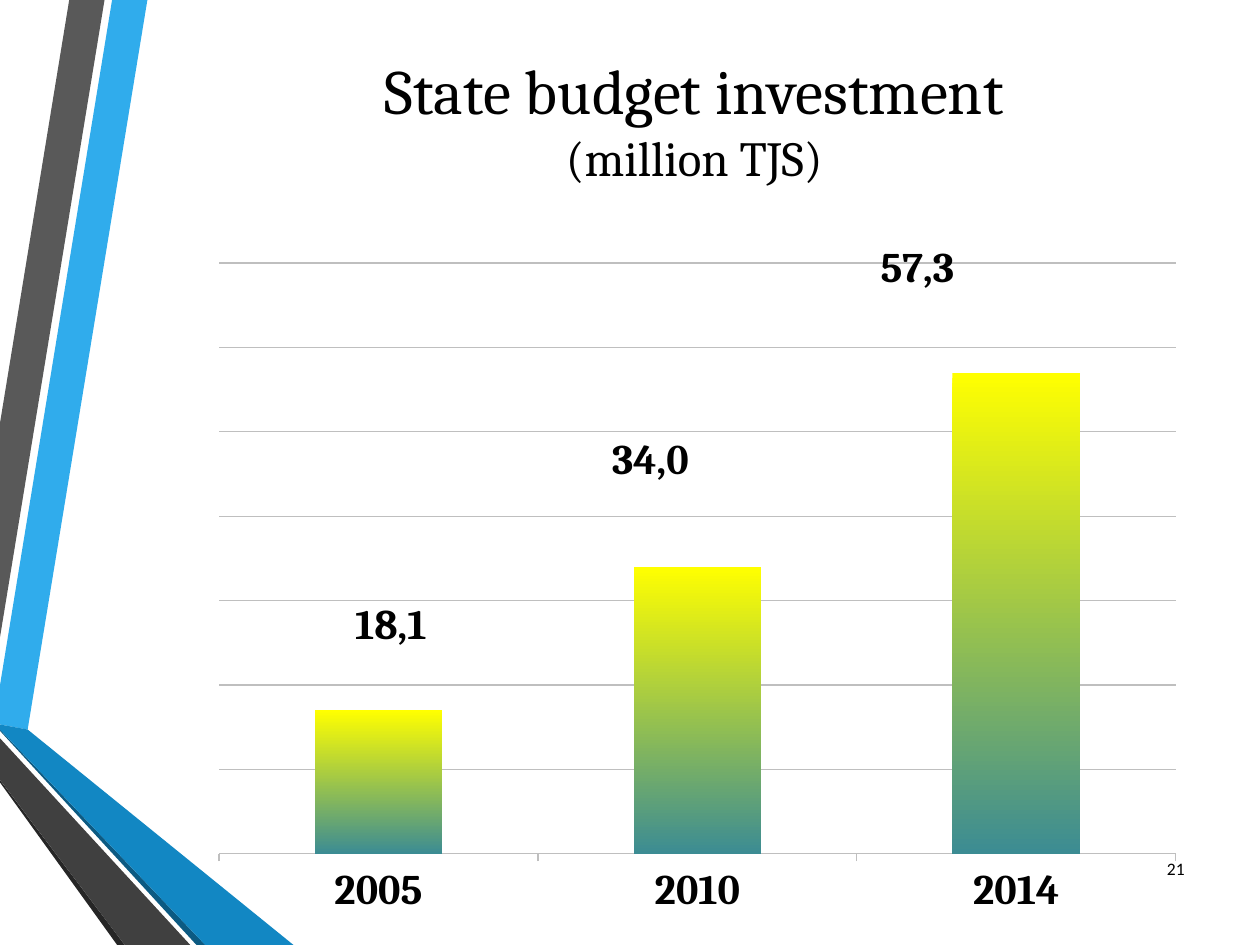
from lxml import etree
from pptx import Presentation
from pptx.chart.data import CategoryChartData
from pptx.dml.color import RGBColor
from pptx.enum.chart import XL_CHART_TYPE, XL_TICK_LABEL_POSITION, XL_TICK_MARK
from pptx.enum.text import MSO_ANCHOR, PP_ALIGN
from pptx.oxml.ns import qn
from pptx.util import Inches, Pt

LEFT, CENTER, RIGHT = PP_ALIGN.LEFT, PP_ALIGN.CENTER, PP_ALIGN.RIGHT
TOP, MIDDLE = MSO_ANCHOR.TOP, MSO_ANCHOR.MIDDLE
COLUMN = XL_CHART_TYPE.COLUMN_CLUSTERED
TICK_OUT, TICK_NONE = XL_TICK_MARK.OUTSIDE, XL_TICK_MARK.NONE
NO_LABELS = XL_TICK_LABEL_POSITION.NONE


def rgb(value):
    return RGBColor.from_string(value)


def add_text(box, lines, font="Cambria", bold=False, align=LEFT, anchor=TOP):
    tf = s.shapes.add_textbox(*[Inches(v) for v in box]).text_frame
    tf.word_wrap = True
    tf.vertical_anchor = anchor
    for i, (text, size) in enumerate(lines):
        p = tf.add_paragraph() if i else tf.paragraphs[0]
        p.text = text
        p.alignment = align
        p.font.name = font
        p.font.size = Pt(size)
        p.font.bold = bold
        p.font.color.rgb = rgb("000000")


prs = Presentation()
prs.slide_width, prs.slide_height = Inches(10), Inches(7.5)
s = prs.slides.add_slide(prs.slide_layouts[6])

ribbons = [
    ("30ACEC", [(0, 5.44), (0, 5.75), (0.22, 5.79), (1.17, 0), (0.89, 0)]),
    ("595959", [(0.83, 0), (0.55, 0), (0, 3.36), (0, 5.06)]),
    ("262626", [(0, 6.19), (0, 6.21), (0.93, 7.5), (0.99, 7.5)]),
    ("0C5A82", [(0, 5.79), (0, 5.8), (1.56, 7.5), (1.63, 7.5)]),
    ("1287C3", [(0, 5.79), (1.63, 7.5), (2.33, 7.5), (0.22, 5.79), (0, 5.75)]),
    ("404040", [(0, 6.19), (0.99, 7.5), (1.51, 7.5), (0, 5.86)]),
]
for color, points in ribbons:
    corners = [(Inches(x), Inches(y)) for x, y in points]
    builder = s.shapes.build_freeform(*corners[0])
    builder.add_line_segments(corners[1:], close=True)
    sp = builder.convert_to_shape()
    sp.shadow.inherit = False
    sp.fill.solid()
    sp.fill.fore_color.rgb = rgb(color)
    sp.line.fill.background()

add_text((0.51, 0.36, 10, 1.18),
         [("State budget investment", 36), ("(million TJS)", 28)], align=CENTER)

data = CategoryChartData()
data.categories = ["2005", "2010", "2014"]
data.add_series("Series 1", [17, 34, 57])
chart = s.shapes.add_chart(COLUMN, Inches(1.58), Inches(1.98),
                           Inches(7.91), Inches(5.39), data).chart
chart.has_legend = False
chart.has_title = False
chart.font.name = "Calibri"
chart.font.size = Pt(18)
chart.font.color.rgb = rgb("000000")

plot = chart.plots[0]
plot.gap_width = 150
plot.vary_by_categories = False
fill = plot.series[0].format.fill
fill.gradient()
fill.gradient_angle = 270
for stop, position, color in zip(fill.gradient_stops, (0, 1), ("FFFF00", "3C8C93")):
    stop.position = position
    stop.color.rgb = rgb(color)

cat_axis = chart.category_axis
cat_axis.major_tick_mark = TICK_OUT
cat_axis.format.line.color.rgb = rgb("BFBFBF")
font = cat_axis.tick_labels.font
font.name = "Cambria"
font.size = Pt(24)
font.bold = True
font.color.rgb = rgb("000000")

val_axis = chart.value_axis
val_axis.minimum_scale = 0
val_axis.maximum_scale = 70
val_axis.major_unit = 10
val_axis.has_major_gridlines = True
val_axis.major_gridlines.format.line.color.rgb = rgb("BFBFBF")
val_axis.major_gridlines.format.line.width = Pt(0.75)
val_axis.major_tick_mark = TICK_NONE
val_axis.tick_label_position = NO_LABELS
val_axis.visible = False

plot_area = chart.element.chart.plotArea
for old in plot_area.findall(qn("c:layout")):
    plot_area.remove(old)
layout = etree.Element(qn("c:layout"))
manual = etree.SubElement(layout, qn("c:manualLayout"))
for tag, value in [("layoutTarget", "inner"), ("xMode", "edge"), ("yMode", "edge"),
                   ("x", "0.02"), ("y", "0.02"), ("w", "0.96"), ("h", "0.87")]:
    etree.SubElement(manual, qn("c:" + tag)).set("val", value)
plot_area.insert(0, layout)

for text, x, y, width in [("18,1", 2.72, 4.69, 1.02), ("34,0", 4.76, 3.38, 1.5),
                          ("57,3", 6.89, 1.86, 2.02)]:
    add_text((x, y, width, 0.5), [(text, 24)], bold=True)

add_text((9.05, 6.69, 0.45, 0.4), [("21", 10)], font="Calibri", align=RIGHT, anchor=MIDDLE)

prs.save("out.pptx")
